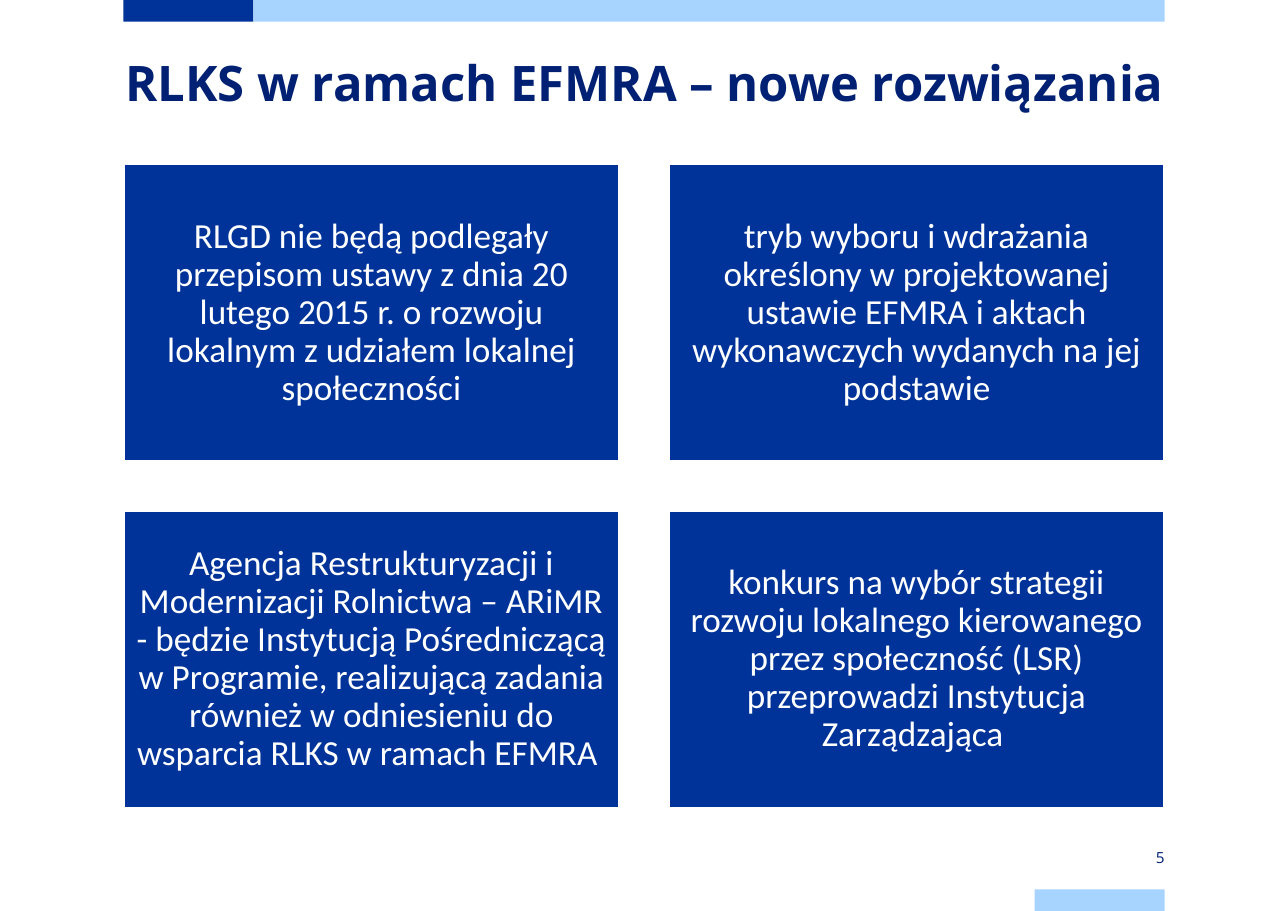
from dataclasses import dataclass

from pptx import Presentation
from pptx.dml.color import RGBColor
from pptx.enum.shapes import MSO_SHAPE
from pptx.enum.text import MSO_ANCHOR, PP_ALIGN
from pptx.shapes.autoshape import Shape
from pptx.slide import Slide
from pptx.text.text import TextFrame
from pptx.util import Length, Pt

RECT = MSO_SHAPE.RECTANGLE
TOP, MIDDLE = MSO_ANCHOR.TOP, MSO_ANCHOR.MIDDLE
CENTER, RIGHT = PP_ALIGN.CENTER, PP_ALIGN.RIGHT


@dataclass(frozen=True)
class Theme:
    navy: RGBColor = RGBColor(0x00, 0x20, 0x73)
    blue: RGBColor = RGBColor(0x00, 0x33, 0x99)
    light: RGBColor = RGBColor(0xA6, 0xD3, 0xFF)
    white: RGBColor = RGBColor(0xFF, 0xFF, 0xFF)
    head_font: str = "Open Sans"
    body_font: str = "Calibri"
    title_size: Length = Pt(32)
    body_size: Length = Pt(23)
    number_size: Length = Pt(10)


@dataclass(frozen=True)
class Box:
    left: float
    top: float
    width: float
    height: float


@dataclass(frozen=True)
class TextStyle:
    font: str
    size: Length
    color: RGBColor
    align: PP_ALIGN
    anchor: MSO_ANCHOR
    bold: bool = False
    inset: float = 0
    spacing: float | Length = 1.0


@dataclass(frozen=True)
class Bar:
    box: Box
    color: RGBColor


THEME = Theme()
TITLE = TextStyle(THEME.head_font, THEME.title_size, THEME.navy, CENTER, TOP,
                  bold=True, spacing=Pt(36))
CARD = TextStyle(THEME.body_font, THEME.body_size, THEME.white, CENTER, MIDDLE,
                 inset=7.2, spacing=0.9)
NUMBER = TextStyle(THEME.head_font, THEME.number_size, THEME.navy, RIGHT, MIDDLE)

BARS = [
    Bar(Box(80.64, 0, 84.96, 14.2), THEME.blue),
    Bar(Box(165.6, 0, 595.44, 14.2), THEME.light),
    Bar(Box(676.08, 581.24, 84.96, 14.2), THEME.light),
]

CARD_LEFT, CARD_TOP = 80.9, 107.3
CARD_WIDTH, CARD_HEIGHT = 324, 194.4
CARD_GAP = 32.2
COLUMNS = 2
CARD_TEXTS = [
    "RLGD nie będą podlegały przepisom ustawy z dnia 20 lutego 2015 r. "
    "o rozwoju lokalnym z udziałem lokalnej społeczności",
    "tryb wyboru i wdrażania określony w projektowanej ustawie EFMRA "
    "i aktach wykonawczych wydanych na jej podstawie",
    "Agencja Restrukturyzacji i Modernizacji Rolnictwa – ARiMR - będzie "
    "Instytucją Pośredniczącą w Programie, realizującą zadania również "
    "w odniesieniu do wsparcia RLKS w ramach EFMRA ",
    "konkurs na wybór strategii rozwoju lokalnego kierowanego przez "
    "społeczność (LSR) przeprowadzi Instytucja Zarządzająca ",
]


def write(tf: TextFrame, text: str, style: TextStyle) -> None:
    tf.text = text
    tf.word_wrap = True
    tf.vertical_anchor = style.anchor
    tf.margin_left = tf.margin_right = Pt(style.inset)
    tf.margin_top = tf.margin_bottom = Pt(style.inset)
    p = tf.paragraphs[0]
    p.alignment = style.align
    p.line_spacing = style.spacing
    font = p.runs[0].font
    font.name = style.font
    font.size = style.size
    font.bold = style.bold
    font.color.rgb = style.color


def add_rect(s: Slide, box: Box, color: RGBColor) -> Shape:
    sp = s.shapes.add_shape(RECT, Pt(box.left), Pt(box.top),
                            Pt(box.width), Pt(box.height))
    sp.shadow.inherit = False
    sp.fill.solid()
    sp.fill.fore_color.rgb = color
    sp.line.fill.background()
    return sp


def add_card(s: Slide, index: int, text: str) -> None:
    row, col = divmod(index, COLUMNS)
    box = Box(CARD_LEFT + col * (CARD_WIDTH + CARD_GAP),
              CARD_TOP + row * (CARD_HEIGHT + CARD_GAP),
              CARD_WIDTH, CARD_HEIGHT)
    sp = add_rect(s, box, THEME.blue)
    sp.line.color.rgb = THEME.white
    sp.line.width = Pt(1.5)
    write(sp.text_frame, text, CARD)


def add_text(s: Slide, box: Box, text: str, style: TextStyle) -> None:
    sp = s.shapes.add_textbox(Pt(box.left), Pt(box.top),
                              Pt(box.width), Pt(box.height))
    write(sp.text_frame, text, style)


def main() -> None:
    prs = Presentation()
    prs.slide_width, prs.slide_height = Pt(841.68), Pt(595.44)
    s = prs.slides.add_slide(prs.slide_layouts[6])
    for bar in BARS:
        add_rect(s, bar.box, bar.color)
    add_text(s, Box(81.36, 36.72, 680.4, 84.96),
             "RLKS w ramach EFMRA – nowe rozwiązania ", TITLE)
    for index, text in enumerate(CARD_TEXTS):
        add_card(s, index, text)
    add_text(s, Box(676.08, 552.96, 84.96, 14.4), "5", NUMBER)
    prs.save("out.pptx")


if __name__ == "__main__":
    main()
